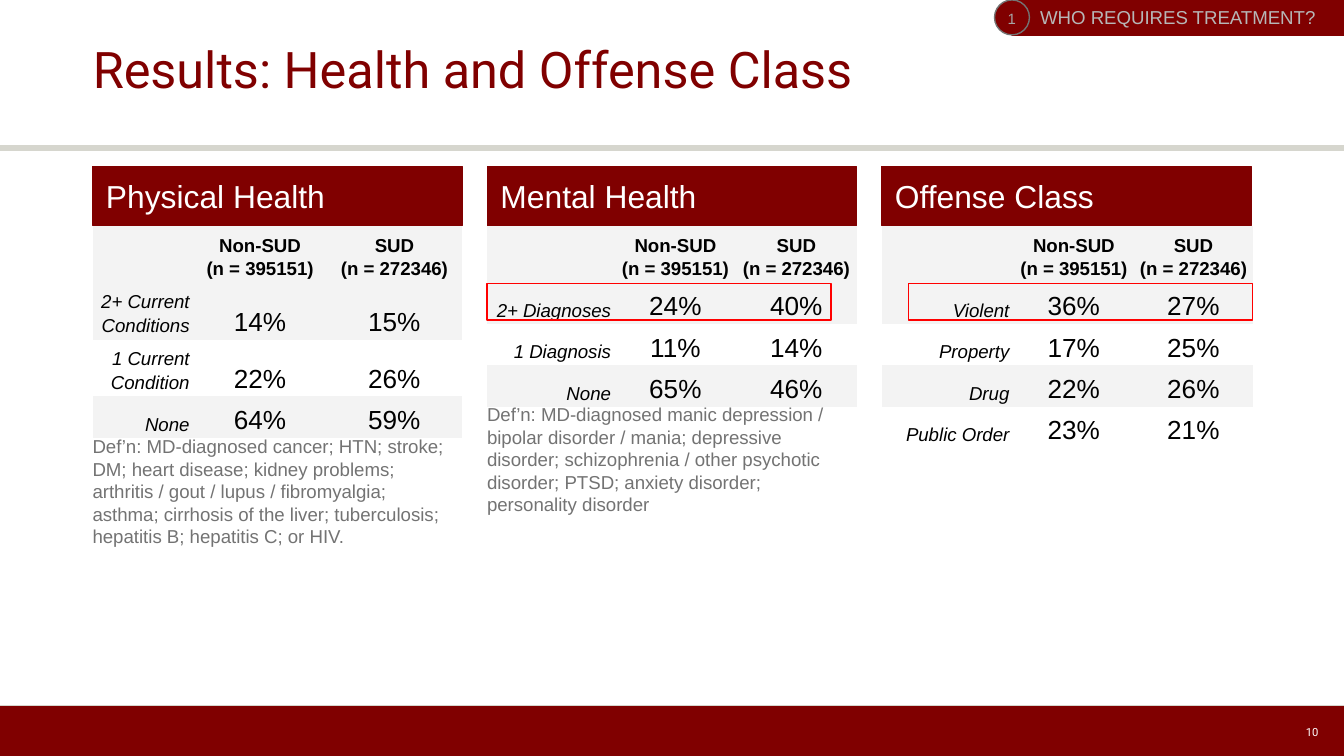
from dataclasses import dataclass

from pptx import Presentation
from pptx.dml.color import RGBColor
from pptx.enum.shapes import MSO_CONNECTOR as CONN, MSO_SHAPE as SHAPE
from pptx.enum.text import MSO_ANCHOR as ANCHOR, MSO_AUTO_SIZE as FIT, PP_ALIGN as ALIGN
from pptx.oxml.ns import qn
from pptx.util import Inches, Pt
from lxml import etree


@dataclass(frozen=True)
class Theme:
    maroon: str = "800000"
    rule: str = "D6D6CE"
    band: str = "F3F3F3"
    white: str = "FFFFFF"
    black: str = "000000"
    grey: str = "737373"
    tag: str = "B7B7B7"
    badge: str = "A6A6A6"
    alert: str = "FF0000"
    body: str = "Arial"
    display: str = "Roboto"
    title: int = 27
    heading: int = 17
    value: int = 14
    label: int = 10
    small: int = 8
    tiny: int = 6


T = Theme()
NO_STYLE = "{2D5ABB26-0587-4C30-8999-92F81FD0307C}"
HEADER = ["", "Non-SUD\n(n = 395151)", "SUD\n(n = 272346)"]
PANELS = [
    dict(heading="Physical Health", cols=[0.28, 0.47, 0.99, 1.01],
         heights=[0.15, 0.11, 0.11, 0.11], height=1.51,
         rows=[["2+ Current Conditions", "14%", "15%"],
               ["1 Current Condition", "22%", "26%"],
               ["None", "64%", "59%"]],
         note="Def’n: MD-diagnosed cancer; HTN; stroke; DM; heart disease; kidney "
              "problems; arthritis / gout / lupus / fibromyalgia; asthma; cirrhosis "
              "of the liver; tuberculosis; hepatitis B; hepatitis C; or HIV."),
    dict(heading="Mental Health", cols=[0.95, 0.9, 0.9],
         heights=[0.22] * 4, height=1.27, highlight=0,
         rows=[["2+ Diagnoses", "24%", "40%"],
               ["1 Diagnosis", "11%", "14%"],
               ["None", "65%", "46%"]],
         note="Def’n: MD-diagnosed manic depression / bipolar disorder / mania; "
              "depressive disorder; schizophrenia / other psychotic disorder; "
              "PTSD; anxiety disorder; personality disorder"),
    dict(heading="Offense Class", cols=[0.98, 0.9, 0.88],
         heights=[0.22] * 5, height=1.56, highlight=0.2,
         rows=[["Violent", "36%", "27%"],
               ["Property", "17%", "25%"],
               ["Drug", "22%", "26%"],
               ["Public Order", "23%", "21%"]]),
]


def rgb(value):
    return RGBColor.from_string(value)


def write(tf, text, size=T.label, color=T.black, font=T.body, bold=False,
          italic=False, align=ALIGN.LEFT, spacing=None, anchor=None, insets=None):
    tf.word_wrap = True
    if anchor is not None:
        tf.vertical_anchor = anchor
    if insets:
        tf.margin_left, tf.margin_top, tf.margin_right, tf.margin_bottom = map(Inches, insets)
    for i, line in enumerate(text.split("\n")):
        p = tf.add_paragraph() if i else tf.paragraphs[0]
        p.alignment = align
        if spacing:
            p.line_spacing = spacing
        r = p.add_run()
        r.text = line
        r.font.size, r.font.name = Pt(size), font
        r.font.bold, r.font.italic = bold, italic
        r.font.color.rgb = rgb(color)


def add_text(s, box, text, **fmt):
    write(s.shapes.add_textbox(*map(Inches, box)).text_frame, text, **fmt)


def add_box(s, box, fill=None, line=None, width=0.75, kind=SHAPE.RECTANGLE):
    sp = s.shapes.add_shape(kind, *map(Inches, box))
    sp.shadow.inherit = False
    if fill:
        sp.fill.solid()
        sp.fill.fore_color.rgb = rgb(fill)
    else:
        sp.fill.background()
    if line:
        sp.line.color.rgb = rgb(line)
        sp.line.width = Pt(width)
    else:
        sp.line.fill.background()
    return sp


def add_rule(s, y, width):
    line = s.shapes.add_connector(CONN.STRAIGHT, 0, Inches(y), Inches(10), Inches(y))
    line.line.color.rgb = rgb(T.rule)
    line.line.width = Pt(width)
    etree.SubElement(line.element.spPr, qn("a:effectLst"))


def add_frame(s):
    add_rule(s, 1.1, 3)
    add_box(s, (0, 5.25, 10, 0.38), T.maroon)
    add_rule(s, 5.25, 0.75)
    add_text(s, (7.06, 5.3, 2.82, 0.3), "10", size=T.tiny, color=T.white, font=T.display,
             align=ALIGN.RIGHT, anchor=ANCHOR.MIDDLE, insets=(0.07, 0.04, 0.07, 0.04))


def add_title(s, box, text):
    title = s.shapes.title
    title.left, title.top, title.width, title.height = map(Inches, box)
    title.text_frame.auto_size = FIT.NONE
    write(title.text_frame, text, size=T.title, color=T.maroon, font=T.display,
          spacing=0.9, anchor=ANCHOR.MIDDLE, insets=(0, 0.04, 0, 0.04))


def add_data_table(s, x, y, panel):
    cols, heights = panel["cols"], panel["heights"]
    frame = s.shapes.add_table(len(heights), len(cols), Inches(x), Inches(y),
                               Inches(sum(cols)), Inches(panel["height"]))
    next(frame.element.iter(qn("a:tableStyleId"))).text = NO_STYLE
    table = frame.table
    table.first_row = table.horz_banding = False
    for col, width in zip(table.columns, cols):
        col.width = Inches(width)
    for row, height in zip(table.rows, heights):
        row.height = Inches(height)
    frame.height = Inches(panel["height"])
    extra = len(cols) - len(HEADER)
    for r, values in enumerate([HEADER] + panel["rows"]):
        for c in range(len(cols)):
            cell = table.cell(r, c)
            cell.fill.solid()
            cell.fill.fore_color.rgb = rgb(T.band if r == 0 or r % 2 else T.white)
            cell.vertical_anchor = ANCHOR.BOTTOM
            cell.margin_left = cell.margin_right = Inches(0.03)
            cell.margin_top = cell.margin_bottom = Inches(0.02)
        if r and extra:
            table.cell(r, 0).merge(table.cell(r, extra))
        for c, text in enumerate(values):
            if text:
                label = r > 0 and c == 0
                write(table.cell(r, c + extra if c else 0).text_frame, text,
                      size=T.value if r and c else T.label, bold=r == 0, italic=label,
                      align=ALIGN.RIGHT if label else ALIGN.CENTER, spacing=1.15)


def add_panel(s, x, y, w, panel):
    head = add_box(s, (x, y, w, 0.44), T.maroon, T.maroon)
    write(head.text_frame, panel["heading"], size=T.heading, color=T.white,
          anchor=ANCHOR.MIDDLE, insets=(0.1,) * 4)
    add_data_table(s, x, y + 0.44, panel)
    if "note" in panel:
        add_text(s, (x - 0.1, y + 0.44 + panel["height"], 2.85, 1), panel["note"], color=T.grey)
    if "highlight" in panel:
        add_box(s, (x + panel["highlight"], y + 0.87, 2.56, 0.27), line=T.alert, width=1)


def add_section_tag(s, x, y, number, text):
    bar = add_box(s, (x + 0.13, y, 2.47, 0.26), T.maroon, T.maroon)
    write(bar.text_frame, text, color=T.tag, anchor=ANCHOR.MIDDLE, insets=(0.21, 0.1, 0, 0.1))
    add_box(s, (x, y, 0.26, 0.26), T.maroon, T.grey, kind=SHAPE.OVAL)
    add_text(s, (x, y + 0.02, 0.27, 0.24), number, size=T.small, color=T.badge)


def main():
    prs = Presentation()
    prs.slide_width = Inches(10)
    prs.slide_height = prs.slide_width * 9 // 16
    s = prs.slides.add_slide(prs.slide_layouts[5])
    add_frame(s)
    add_title(s, (0.69, 0, 8.62, 1.08), "Results: Health and Offense Class")
    left, right, width = 0.69, 9.31, 2.75
    step = (right - left - width) / (len(PANELS) - 1)
    for i, panel in enumerate(PANELS):
        add_panel(s, left + i * step, 1.24, width, panel)
    add_section_tag(s, 7.4, 0, "1", "WHO REQUIRES TREATMENT?")
    prs.save("out.pptx")


if __name__ == "__main__":
    main()
